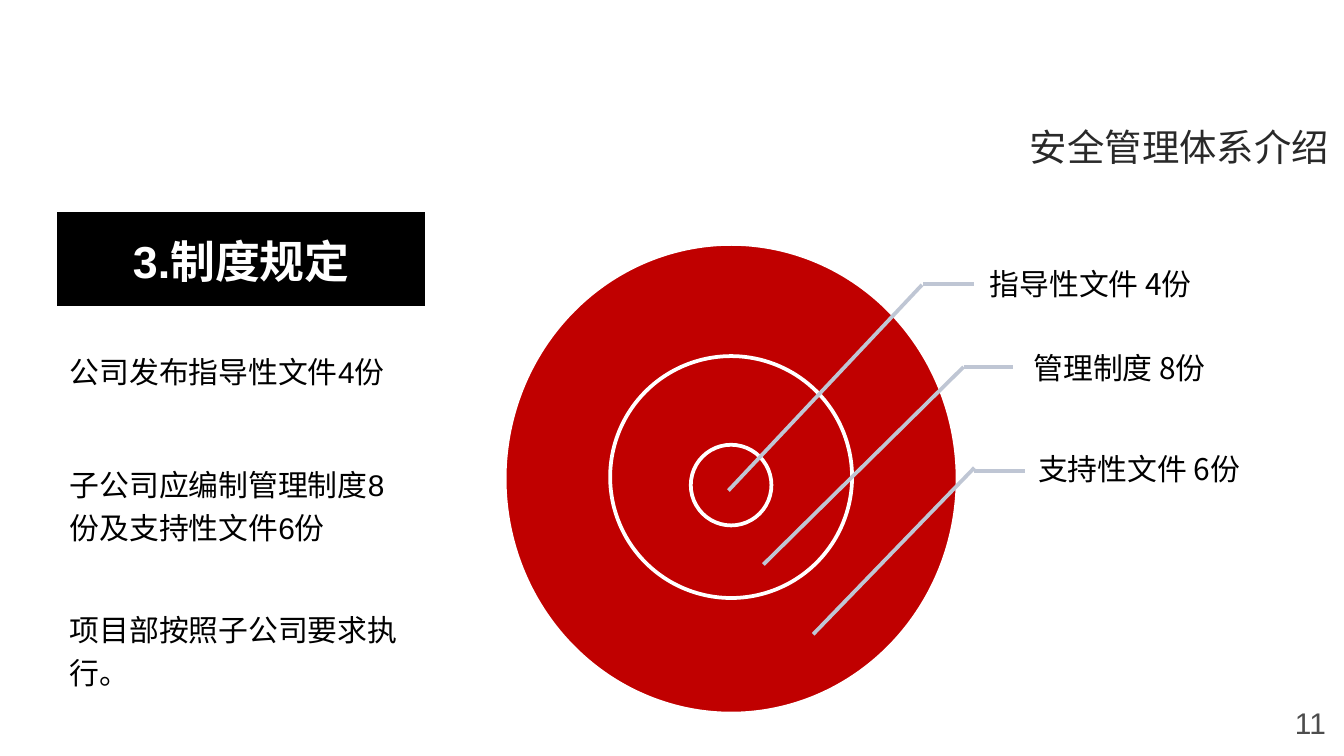
"""Build the safety management system slide with its policy table and target diagram."""
from lxml.etree import SubElement
from pptx import Presentation
from pptx.dml.color import RGBColor
from pptx.enum.shapes import MSO_CONNECTOR, MSO_SHAPE
from pptx.enum.text import MSO_ANCHOR, PP_ALIGN
from pptx.oxml.ns import qn
from pptx.util import Pt

PX = 4572
CJK = "Noto Sans CJK SC"
BLACK = RGBColor(0x00, 0x00, 0x00)
WHITE = RGBColor(0xFF, 0xFF, 0xFF)
RED = RGBColor(0xC0, 0x00, 0x00)
LEADER = RGBColor(0xBF, 0xC6, 0xD4)
TITLE_GRAY = RGBColor(0x29, 0x29, 0x29)
NUMBER_GRAY = RGBColor(0x4D, 0x4D, 0x4D)


def write(frame, text, size, color, latin=CJK, align=PP_ALIGN.LEFT, bold=False):
    frame.text = text
    para = frame.paragraphs[0]
    para.alignment = align
    para.font.size = Pt(size)
    para.font.bold = bold
    para.font.color.rgb = color
    para.font.name = latin
    SubElement(para._p.pPr.find(qn("a:defRPr")), qn("a:ea"), typeface=CJK)
    return para


def place(left, top, width, height):
    return [value * PX for value in (left, top, width, height)]


deck = Presentation()
deck.slide_width, deck.slide_height = 2000 * PX, 1125 * PX
page = deck.slides.add_slide(deck.slide_layouts[5])

title = page.shapes.title
title.left, title.top, title.width, title.height = place(1508, 175, 490, 88)
title.text_frame.word_wrap = False
title.text_frame.vertical_anchor = MSO_ANCHOR.TOP
write(title.text_frame, "安全管理体系介绍", 20, TITLE_GRAY, align=PP_ALIGN.RIGHT)

number = page.shapes.add_textbox(*place(1902, 1039, 96, 74))
number.text_frame.word_wrap = False
write(number.text_frame, "11", 16, NUMBER_GRAY, "Arial", PP_ALIGN.CENTER)

for bounds in [(751, 363, 674, 699), (908, 530, 360, 360), (1028, 662, 120, 120)]:
    ring = page.shapes.add_shape(MSO_SHAPE.OVAL, *place(*bounds))
    ring.shadow.inherit = False
    ring.fill.solid()
    ring.fill.fore_color.rgb = RED
    ring.line.color.rgb = WHITE
    ring.line.width = Pt(2)

callouts = [
    ("指导性文件 4份", (1449, 338, 384, 174), (1374, 423, 1450, 423), (1372, 424, 1084, 730)),
    ("管理制度 8份", (1514, 463, 320, 174), (1434, 546, 1508, 546), (1434, 546, 1136, 840)),
    ("支持性文件 6份", (1521, 613, 380, 174), (1450, 701, 1525, 701), (1450, 696, 1210, 944)),
]
for text, bounds, *segments in callouts:
    box = page.shapes.add_textbox(*place(*bounds))
    frame = box.text_frame
    frame.word_wrap = True
    frame.vertical_anchor = MSO_ANCHOR.MIDDLE
    frame.margin_left = 24 * PX
    frame.margin_top = frame.margin_right = frame.margin_bottom = 4 * PX
    para = write(frame, text, 16, BLACK)
    para.line_spacing = 0.9
    for segment in segments:
        leader = page.shapes.add_connector(MSO_CONNECTOR.STRAIGHT, *place(*segment))
        leader.line.color.rgb = LEADER
        leader.line.width = Pt(2)
        SubElement(leader._element.spPr, qn("a:effectLst"))

rows = [
    ("3.制度规定", 142),
    ("公司发布指导性文件4份", 192),
    ("子公司应编制管理制度8份及支持性文件6份", 206),
    ("项目部按照子公司要求执行。", 226),
]
table = page.shapes.add_table(len(rows), 1, *place(84, 314, 550, 764)).table
table.first_row = table.horz_banding = False
for index, (text, height) in enumerate(rows):
    table.rows[index].height = height * PX
    cell = table.cell(index, 0)
    cell.vertical_anchor = MSO_ANCHOR.MIDDLE
    cell.margin_left = cell.margin_right = 20 * PX
    cell.margin_top = cell.margin_bottom = 14 * PX
    for edge in ("a:lnL", "a:lnR", "a:lnT", "a:lnB"):
        border = SubElement(cell._tc.get_or_add_tcPr(), qn(edge), w=str(Pt(1)))
        if index == 0 and edge != "a:lnB":
            SubElement(SubElement(border, qn("a:solidFill")), qn("a:srgbClr"), val=str(WHITE))
        else:
            SubElement(border, qn("a:noFill"))
    if index == 0:
        cell.fill.solid()
        cell.fill.fore_color.rgb = BLACK
        write(cell.text_frame, text, 24, WHITE, "Arial", PP_ALIGN.CENTER, True)
    else:
        cell.fill.background()
        write(cell.text_frame, text, 16, BLACK, "Arial")

deck.save("out.pptx")
